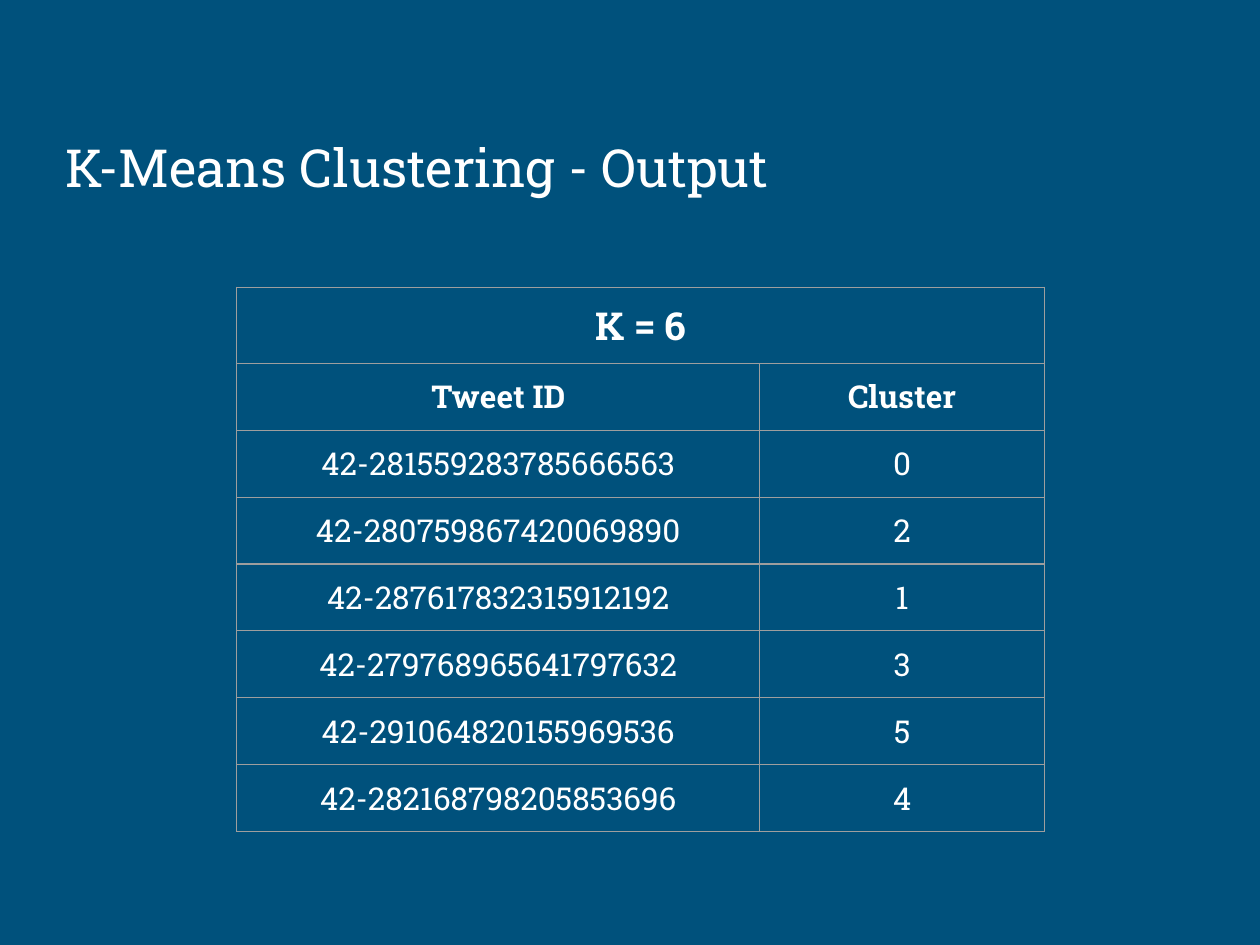
"""Build the K-Means clustering output slide."""
import pptx
import pptx.dml.color
import pptx.enum.text
import pptx.oxml
import pptx.oxml.ns
import pptx.util

TITLE = "K-Means Clustering - Output"
CLUSTER_COUNT = "K = 6"
HEADINGS = ("Tweet ID", "Cluster")
ASSIGNMENTS = [
    ("42-281559283785666563", "0"),
    ("42-280759867420069890", "2"),
    ("42-287617832315912192", "1"),
    ("42-279768965641797632", "3"),
    ("42-291064820155969536", "5"),
    ("42-282168798205853696", "4"),
]
COLORS = {"background": "00517C", "text": "FFFFFF", "border": "9E9E9E"}
FONT = "Roboto Slab"
INSET = pptx.util.Inches(0.1)
COLUMN_WIDTHS = (4.15, 2.26)
BANNER_HEIGHT, ROW_HEIGHT = 0.6, 0.53
TABLE_LEFT, TABLE_TOP = 1.88, 2.28


def style_text(frame, size, bold=False):
    frame.margin_left = frame.margin_right = INSET
    frame.margin_top = frame.margin_bottom = INSET
    font = frame.paragraphs[0].runs[0].font
    font.name = FONT
    font.size = pptx.util.Pt(size)
    font.bold = bold
    font.color.rgb = pptx.dml.color.RGBColor.from_string(COLORS["text"])


def add_borders(cell):
    properties = cell._tc.get_or_add_tcPr()
    for position, side in enumerate(("lnL", "lnR", "lnT", "lnB")):
        properties.insert(position, pptx.oxml.parse_xml(
            f'<a:{side} {pptx.oxml.ns.nsdecls("a")} w="{pptx.util.Pt(0.75)}">'
            f'<a:solidFill><a:srgbClr val="{COLORS["border"]}"/></a:solidFill>'
            f'</a:{side}>'))


def add_title(slide):
    title = slide.shapes.title
    title.left, title.top, title.width, title.height = map(
        pptx.util.Inches, (0.42, 0.67, 9.15, 1))
    frame = title.text_frame
    frame.text = TITLE
    frame.word_wrap = True
    frame.auto_size = pptx.enum.text.MSO_AUTO_SIZE.NONE
    frame.vertical_anchor = pptx.enum.text.MSO_ANCHOR.BOTTOM
    frame.paragraphs[0].alignment = pptx.enum.text.PP_ALIGN.LEFT
    style_text(frame, 30)


def add_assignments(slide):
    rows = [(CLUSTER_COUNT, ""), HEADINGS, *ASSIGNMENTS]
    heights = [BANNER_HEIGHT] + [ROW_HEIGHT] * (len(rows) - 1)
    table = slide.shapes.add_table(
        len(rows), len(HEADINGS), *map(pptx.util.Inches, (
            TABLE_LEFT, TABLE_TOP, sum(COLUMN_WIDTHS), sum(heights)))).table
    table.first_row = table.horz_banding = False
    for column, width in zip(table.columns, COLUMN_WIDTHS):
        column.width = pptx.util.Inches(width)
    table.cell(0, 0).merge(table.cell(0, len(HEADINGS) - 1))
    for r, (values, height) in enumerate(zip(rows, heights)):
        table.rows[r].height = pptx.util.Inches(height)
        for c, value in enumerate(values):
            cell = table.cell(r, c)
            cell.fill.background()
            add_borders(cell)
            if cell.is_spanned:
                continue
            cell.text = value
            cell.margin_left = cell.margin_right = INSET
            cell.margin_top = cell.margin_bottom = INSET
            paragraph = cell.text_frame.paragraphs[0]
            paragraph.alignment = pptx.enum.text.PP_ALIGN.CENTER
            font = paragraph.runs[0].font
            font.name = FONT
            font.size = pptx.util.Pt(22 if r == 0 else 18)
            font.bold = r < 2
            font.color.rgb = pptx.dml.color.RGBColor.from_string(COLORS["text"])


def main():
    deck = pptx.Presentation()
    deck.slide_width = pptx.util.Inches(10)
    deck.slide_height = pptx.util.Inches(7.5)
    slide = deck.slides.add_slide(deck.slide_layouts.get_by_name("Title Only"))
    slide.background.fill.solid()
    slide.background.fill.fore_color.rgb = (
        pptx.dml.color.RGBColor.from_string(COLORS["background"]))
    add_title(slide)
    add_assignments(slide)
    deck.save("out.pptx")


if __name__ == "__main__":
    main()
